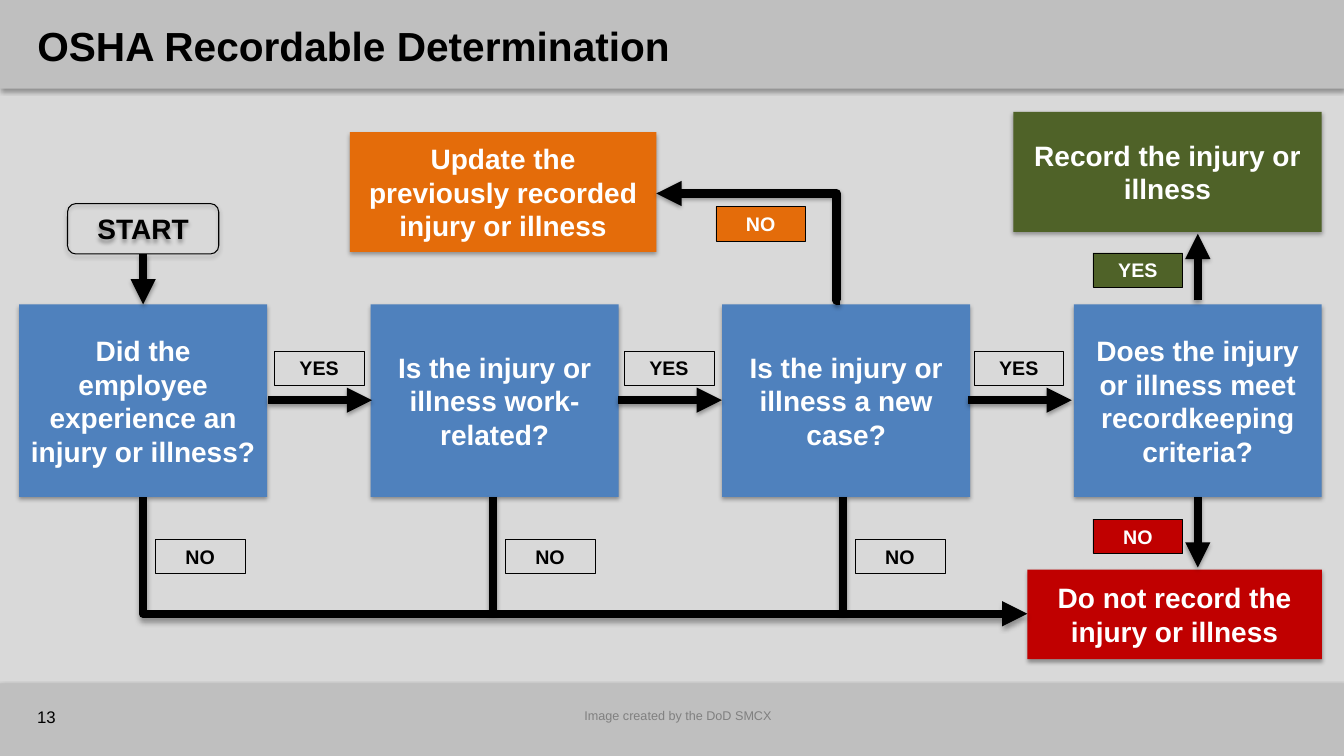
from pptx import Presentation
from pptx.dml.color import RGBColor
from pptx.enum import shapes, text
from pptx.oxml import parse_xml
from pptx.oxml import ns
from pptx.util import Inches, Pt

BLACK = RGBColor(0x00, 0x00, 0x00)
WHITE = RGBColor(0xFF, 0xFF, 0xFF)
BACKDROP = RGBColor(0xD9, 0xD9, 0xD9)
BAND = RGBColor(0xBF, 0xBF, 0xBF)
GREY = RGBColor(0x80, 0x80, 0x80)
BLUE = RGBColor(0x4F, 0x81, 0xBD)
GREEN = RGBColor(0x4F, 0x62, 0x28)
ORANGE = RGBColor(0xE4, 0x6C, 0x0A)
RED = RGBColor(0xC0, 0x00, 0x00)

TITLE = "OSHA Recordable Determination"
QUESTIONS = [
    "Did the employee experience an injury or illness?",
    "Is the injury or illness work-related?",
    "Is the injury or illness a new case?",
    "Does the injury or illness meet recordkeeping criteria?",
]
OUTCOMES = [
    ("Record the injury or illness", (10.05, 1.11, 3.06, 1.19), GREEN),
    ("Do not record the injury or illness", (10.19, 5.65, 2.92, 0.89), RED),
    ("Update the previously recorded injury or illness", (3.47, 1.31, 3.04, 1.19), ORANGE),
]
COLOURED_TAGS = [
    ("NO", 7.1, 2.05, ORANGE),
    ("YES", 10.84, 2.51, GREEN),
    ("NO", 10.84, 5.15, RED),
]
NOTES = [
    ("13", (0.27, 6.91, 2.33, 0.4), 12, BLACK, text.PP_ALIGN.LEFT),
    ("Image created by the DoD SMCX", (4.06, 6.97, 5.33, 0.25), 9, GREY, text.PP_ALIGN.CENTER),
]

SLIDE_WIDTH, SLIDE_HEIGHT = 13.33, 7.5
BOX_TOP, BOX_WIDTH, BOX_HEIGHT = 3.02, 2.46, 1.91
BOX_BOTTOM = BOX_TOP + BOX_HEIGHT
FIRST_LEFT, LAST_LEFT = 0.19, 10.65
BOX_STEP = (LAST_LEFT - FIRST_LEFT) / (len(QUESTIONS) - 1)
FIRST_CENTRE, LAST_CENTRE = FIRST_LEFT + BOX_WIDTH / 2, LAST_LEFT + BOX_WIDTH / 2
LINE_STEP = 3.47
RAIL = 6.09

SHADOW = (
    f'<a:outerShdw {ns.nsdecls("a")} blurRad="40000" dist="23000" dir="5400000" rotWithShape="0">'
    '<a:srgbClr val="000000"><a:alpha val="35000"/></a:srgbClr></a:outerShdw>'
)


def write(shape, words, size, colour, bold=True, align=text.PP_ALIGN.CENTER):
    """Put one formatted paragraph in a shape."""
    frame = shape.text_frame
    frame.word_wrap = True
    frame.vertical_anchor = text.MSO_ANCHOR.MIDDLE
    frame.text = words
    para = frame.paragraphs[0]
    para.alignment = align
    font = para.runs[0].font
    font.name, font.size, font.bold = "Arial", Pt(size), bold
    font.color.rgb = colour


def add_box(page, place, fill=None, line=None, shadow=True, kind=shapes.MSO_SHAPE.RECTANGLE):
    """Add a preset shape with an optional fill, outline and shadow."""
    box = page.shapes.add_shape(kind, *map(Inches, place))
    if fill is None:
        box.fill.background()
    else:
        box.fill.solid()
        box.fill.fore_color.rgb = fill
    if line is None:
        box.line.fill.background()
    else:
        box.line.color.rgb = BLACK
        box.line.width = Pt(line)
    box.shadow.inherit = False
    if shadow:
        box.element.spPr.find(ns.qn("a:effectLst")).append(parse_xml(SHADOW))
    return box


def add_tag(page, words, left, top, fill=None):
    """Add a small YES or NO label."""
    tag = add_box(page, (left, top, 0.89, 0.34), fill, 0.25, shadow=False)
    write(tag, words, 14, BLACK if fill is None else WHITE)


def add_line(page, start, end, arrow="tailEnd", kind=shapes.MSO_CONNECTOR.STRAIGHT):
    """Add a thick black connector with a shadow and an optional arrowhead."""
    line = page.shapes.add_connector(kind, *map(Inches, start + end))
    line.line.color.rgb = BLACK
    line.line.width = Pt(6)
    properties = line.element.spPr
    outline = properties.find(ns.qn("a:ln"))
    outline.append(parse_xml(f'<a:round {ns.nsdecls("a")}/>'))
    if arrow:
        outline.append(parse_xml(f'<a:{arrow} {ns.nsdecls("a")} type="triangle"/>'))
    effects = parse_xml(f'<a:effectLst {ns.nsdecls("a")}/>')
    effects.append(parse_xml(SHADOW))
    properties.append(effects)
    return line.element.spPr.find(ns.qn("a:prstGeom"))


def main():
    """Build the decision flow slide."""
    deck = Presentation()
    deck.slide_width, deck.slide_height = Inches(SLIDE_WIDTH), Inches(SLIDE_HEIGHT)
    page = deck.slides.add_slide(deck.slide_layouts[5])
    page.background.fill.solid()
    page.background.fill.fore_color.rgb = BACKDROP

    add_box(page, (0, 6.78, SLIDE_WIDTH, 0.72), BAND)
    add_box(page, (0, 0, SLIDE_WIDTH, 0.88), BAND)
    title = page.shapes.title
    page.shapes.element.append(title.element)
    title.left, title.top, title.width, title.height = map(Inches, (0.27, 0.14, 12.93, 0.62))
    write(title, TITLE, 29, BLACK, align=text.PP_ALIGN.LEFT)
    for words, place, size, colour, align in NOTES:
        note = page.shapes.add_textbox(*map(Inches, place))
        write(note, words, size, colour, False, align)

    for words, place, fill in OUTCOMES:
        write(add_box(page, place, fill), words, 20, WHITE)
    for column, words in enumerate(QUESTIONS):
        place = (FIRST_LEFT + column * BOX_STEP, BOX_TOP, BOX_WIDTH, BOX_HEIGHT)
        write(add_box(page, place, BLUE), words, 20, WHITE)

    elbow = shapes.MSO_CONNECTOR.ELBOW
    update = add_line(page, (8.33, 2.98), (6.51, 1.92), kind=elbow)
    update.get_or_add_avLst().append(
        parse_xml(f'<a:gd {ns.nsdecls("a")} name="adj1" fmla="val 1800"/>'))
    rail = add_line(page, (10.19, RAIL), (FIRST_CENTRE, BOX_BOTTOM), "headEnd", elbow)
    rail.set("prst", "bentConnector2")

    for column in range(len(QUESTIONS) - 1):
        shift = column * LINE_STEP
        add_line(page, (2.66 + shift, 3.97), (3.69 + shift, 3.97))
        add_tag(page, "YES", 2.72 + shift, 3.48)
        drop = FIRST_CENTRE + shift
        if column:
            add_line(page, (drop, BOX_BOTTOM), (drop, RAIL), None)
        add_tag(page, "NO", drop + 0.12, 5.35)
    add_line(page, (LAST_CENTRE, 2.98), (LAST_CENTRE, 2.32))
    add_line(page, (LAST_CENTRE, BOX_BOTTOM), (LAST_CENTRE, 5.63))
    for tag in COLOURED_TAGS:
        add_tag(page, *tag)

    start = add_box(page, (0.67, 2.02, 1.5, 0.5), line=0.75,
                    kind=shapes.MSO_SHAPE.ROUNDED_RECTANGLE)
    write(start, "START", 20, BLACK)
    add_line(page, (FIRST_CENTRE, 2.52), (FIRST_CENTRE, BOX_TOP))
    deck.save("out.pptx")


if __name__ == "__main__":
    main()
